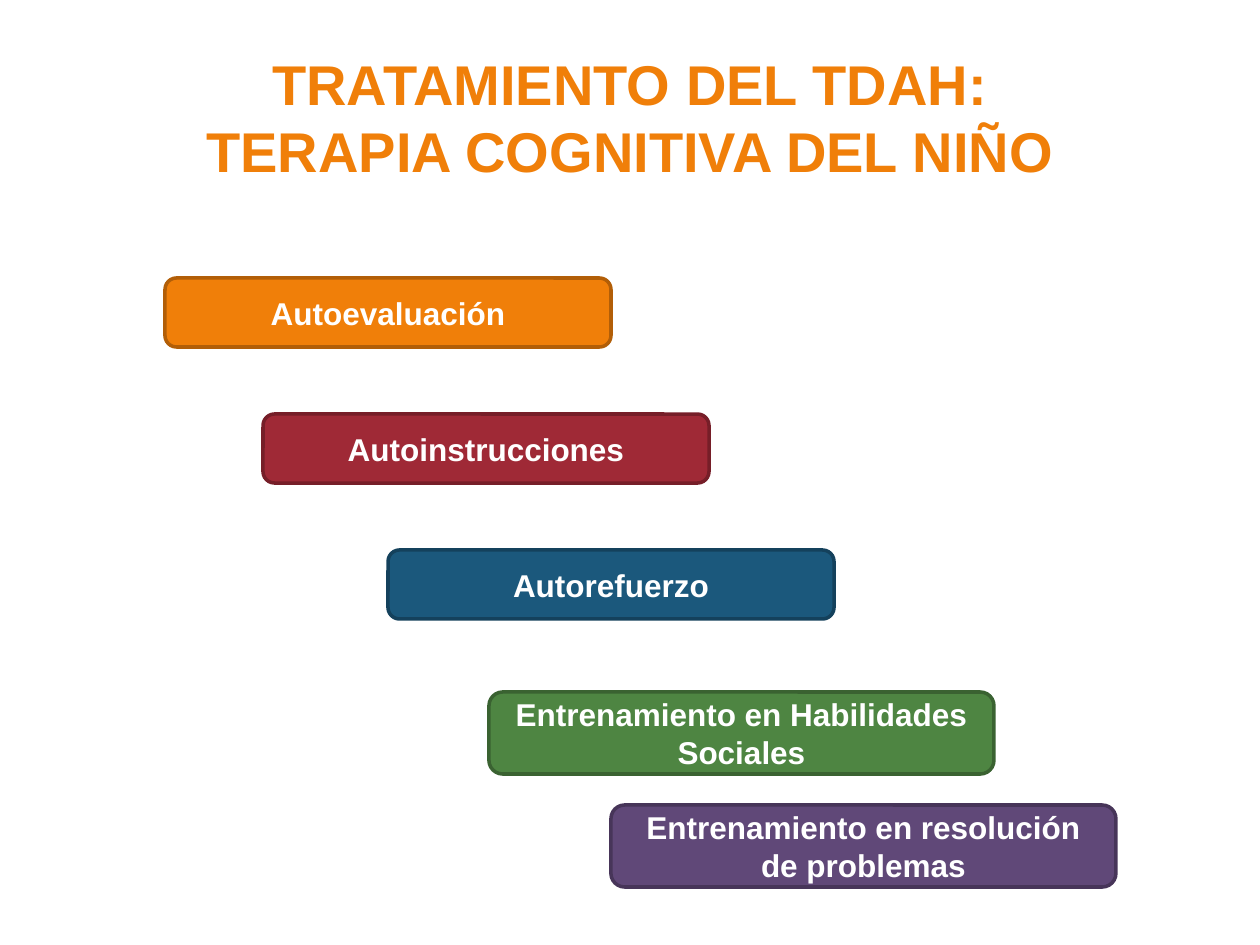
from pptx import Presentation
from pptx import util as u
from pptx.dml.color import RGBColor
from pptx.enum import shapes, text

PX = u.Inches(1) / 126
COLOURS = {
    "orange": "F07F09", "orange_edge": "B25E07",
    "red": "9F2936", "red_edge": "761E28",
    "blue": "1B587C", "blue_edge": "14415C",
    "green": "4E8542", "green_edge": "3A6231",
    "purple": "604878", "purple_edge": "473559",
    "white": "FFFFFF",
}
TITLE = "TRATAMIENTO DEL TDAH:\vTERAPIA COGNITIVA DEL NIÑO"
SHORT, TALL = (446, 69), (505, 82)
TECHNIQUES = [
    ("Autoevaluación", "orange", (165, 278), SHORT),
    ("Autoinstrucciones", "red", (263, 414), SHORT),
    ("Autorefuerzo", "blue", (388, 550), SHORT),
    ("Entrenamiento en Habilidades Sociales", "green", (489, 692), TALL),
    ("Entrenamiento en resolución de problemas", "purple", (611, 805), TALL),
]


def px(length):
    """Turn a length in px into EMU."""
    return round(length * PX)


def colour(name):
    """Return the named colour of the palette."""
    return RGBColor.from_string(COLOURS[name])


def write(frame, wording, size, ink):
    """Fill a text frame with one centred, bold paragraph."""
    frame.text = wording
    frame.word_wrap = True
    frame.vertical_anchor = text.MSO_ANCHOR.MIDDLE
    line = frame.paragraphs[0]
    line.alignment = text.PP_ALIGN.CENTER
    looks = {"name": "Arial", "size": u.Pt(size), "bold": True}
    for part in (line, *line.runs):
        for key, value in looks.items():
            setattr(part.font, key, value)
        part.font.color.rgb = colour(ink)


def place_title(slide, box):
    """Move the title placeholder into its box and write the heading."""
    heading = slide.shapes.title
    for side, length in zip(("left", "top", "width", "height"), box):
        setattr(heading, side, px(length))
    write(heading.text_frame, TITLE, 32, "orange")


def place_techniques(slide, box):
    """Draw the staircase of therapy techniques from the corner of its box."""
    left, top = box
    for wording, hue, (x, y), (width, height) in TECHNIQUES:
        step = slide.shapes.add_shape(
            shapes.MSO_SHAPE.ROUNDED_RECTANGLE,
            px(left + x), px(top + y), px(width), px(height))
        step.shadow.inherit = False
        step.fill.solid()
        step.fill.fore_color.rgb = colour(hue)
        step.line.color.rgb = colour(f"{hue}_edge")
        step.line.width = u.Pt(2)
        write(step.text_frame, wording, 18, "white")


def main():
    """Build the slide and save it."""
    deck = Presentation()
    deck.slide_width, deck.slide_height = px(1260), px(945)
    slide = deck.slides.add_slide(deck.slide_layouts[5])
    slide.background.fill.solid()
    slide.background.fill.fore_color.rgb = colour("white")
    place_title(slide, (63, 38, 1134, 157))
    place_techniques(slide, (0, 0))
    deck.save("out.pptx")


if __name__ == "__main__":
    main()
